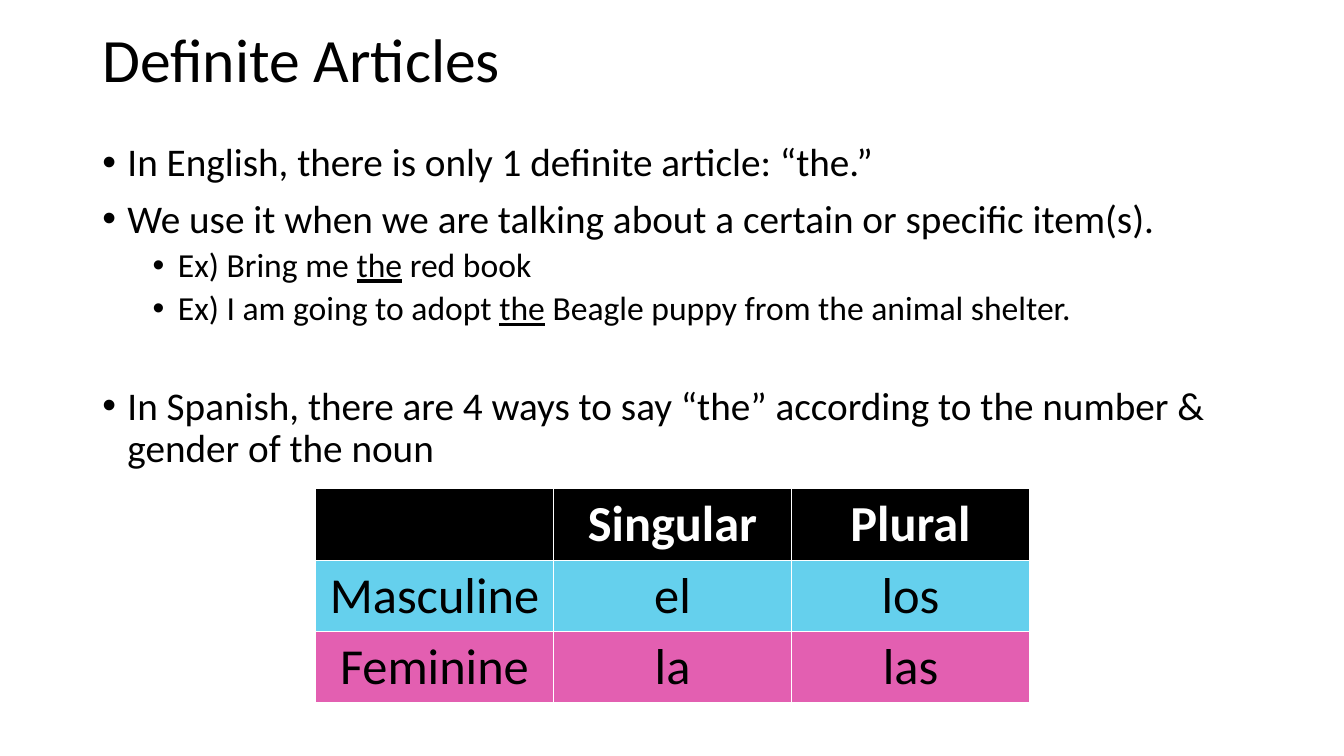
"""Builds a slide on definite articles in English and Spanish."""
from lxml import etree
from pptx import Presentation
from pptx.dml.color import RGBColor
from pptx.enum.text import MSO_ANCHOR, PP_ALIGN
from pptx.oxml.ns import qn
from pptx.util import Pt

CENTER, LEFT = PP_ALIGN.CENTER, PP_ALIGN.LEFT
MIDDLE, TOP = MSO_ANCHOR.MIDDLE, MSO_ANCHOR.TOP
FONT, BLACK, WHITE = "Calibri", "000000", "FFFFFF"

TITLE = "Definite Articles"
BULLETS = [
    (0, 10, ["In English, there is only 1 definite article: “the.”"]),
    (0, 10, ["We use it when we are talking about a certain or specific item(s)."]),
    (1, 5, ["Ex) Bring me ", "the", " red book"]),
    (1, 5, ["Ex) I am going to adopt ", "the", " Beagle puppy from the animal shelter."]),
    (0, 41.4, ["In Spanish, there are 4 ways to say “the” according to the number & gender of the noun"]),
]
ARTICLES = [
    (["", "Singular", "Plural"], BLACK, WHITE),
    (["Masculine", "el", "los"], "65D0ED", BLACK),
    (["Feminine", "la", "las"], "E35FB1", BLACK),
]
LEVEL_SIZES = [28, 24]
HANGING = 18
LEVEL_STEP = 36
TITLE_AREA = (66, -7.2, 828, 104.4)
BODY_AREA = (66, 98.6, 828, 342.7)
TABLE_LEFT, TABLE_TOP = 225.4, 349.2
COLUMN_WIDTH, ROW_HEIGHT = 170, 51


def color(value):
    return RGBColor.from_string(value)


def apply(target, values):
    for name, value in values.items():
        setattr(target, name, value)


def add_span(para, text, size, ink=BLACK, **extra):
    span = para.add_run()
    span.text = text
    apply(span.font, {"name": FONT, "size": Pt(size), **extra})
    span.font.color.rgb = color(ink)


def add_box(page, area, anchor):
    frame = page.shapes.add_textbox(*map(Pt, area)).text_frame
    apply(frame, {"word_wrap": True, "vertical_anchor": anchor})
    return frame


def add_bullet(para, level):
    props = para._p.get_or_add_pPr()
    props.set("marL", str(Pt(HANGING + level * LEVEL_STEP)))
    props.set("indent", str(-Pt(HANGING)))
    etree.SubElement(props, qn("a:buFont")).set("typeface", "Arial")
    etree.SubElement(props, qn("a:buChar")).set("char", "•")


def add_title(page):
    para = add_box(page, TITLE_AREA, MIDDLE).paragraphs[0]
    apply(para, {"line_spacing": 0.9, "alignment": LEFT})
    add_span(para, TITLE, 44)


def add_body(page):
    frame = add_box(page, BODY_AREA, TOP)
    for index, (level, space, parts) in enumerate(BULLETS):
        para = frame.add_paragraph() if index else frame.paragraphs[0]
        apply(para, {"level": level, "line_spacing": 0.9,
                     "space_before": Pt(space), "alignment": LEFT})
        add_bullet(para, level)
        for part in parts:
            add_span(para, part, LEVEL_SIZES[level], underline=part == "the")


def add_articles(page):
    rows, columns = len(ARTICLES), len(ARTICLES[0][0])
    area = (TABLE_LEFT, TABLE_TOP, columns * COLUMN_WIDTH, rows * ROW_HEIGHT)
    table = page.shapes.add_table(rows, columns, *map(Pt, area)).table
    table.horz_banding = False
    for row, (words, fill, ink) in enumerate(ARTICLES):
        for column, word in enumerate(words):
            cell = table.cell(row, column)
            cell.fill.solid()
            cell.fill.fore_color.rgb = color(fill)
            para = cell.text_frame.paragraphs[0]
            para.alignment = CENTER
            if word:
                add_span(para, word, 36, ink, bold=row == 0)


def main():
    deck = Presentation()
    apply(deck, {"slide_width": Pt(960), "slide_height": Pt(540)})
    page = deck.slides.add_slide(deck.slide_layouts[6])
    add_title(page)
    add_body(page)
    add_articles(page)
    deck.save("out.pptx")


if __name__ == "__main__":
    main()
